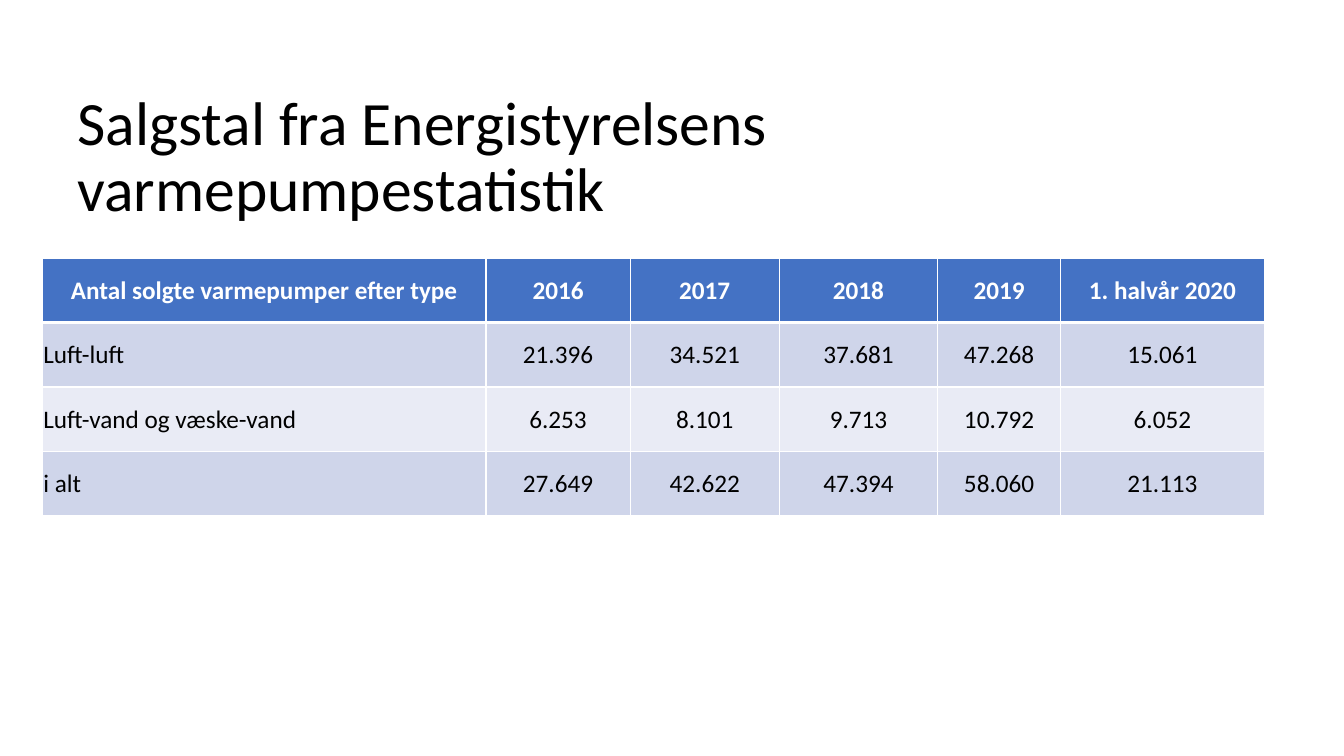
from dataclasses import dataclass

from lxml import etree
from pptx import Presentation
from pptx import util as u
from pptx.dml import color as c
from pptx.enum import text
from pptx.oxml import ns

FONT = "Calibri"
WHITE, BLACK = "FFFFFF", "000000"
WIDTHS = [4.4, 1.43, 1.48, 1.57, 1.22, 2.02]
HIGH = 0.64


@dataclass
class Row:
    cells: list[str]
    fill: str
    ink: str = BLACK
    head: bool = False


ROWS = [
    Row(["Antal solgte varmepumper efter type", "2016", "2017", "2018", "2019",
         "1. halvår 2020"], "4472C4", WHITE, True),
    Row(["Luft-luft", "21.396", "34.521", "37.681", "47.268", "15.061"], "CFD5EA"),
    Row(["Luft-vand og væske-vand", "6.253", "8.101", "9.713", "10.792", "6.052"],
        "E9EBF5"),
    Row(["i alt", "27.649", "42.622", "47.394", "58.060", "21.113"], "CFD5EA"),
]


def rgb(code: str) -> c.RGBColor:
    return c.RGBColor.from_string(code)


def add_run(para, words: str, size: float, ink: str, bold: bool = False) -> None:
    run = para.add_run()
    run.text = words
    run.font.name = FONT
    run.font.size = u.Pt(size)
    run.font.bold = bold
    run.font.color.rgb = rgb(ink)


def add_edge(cell, side: str, width: float) -> None:
    props = cell._tc.get_or_add_tcPr()
    line = etree.SubElement(props, ns.qn(f"a:ln{side}"), w=str(u.Pt(width)))
    fill = etree.SubElement(line, ns.qn("a:solidFill"))
    etree.SubElement(fill, ns.qn("a:srgbClr"), val=WHITE)


def draw_cell(cell, words: str, row: Row, first: bool) -> None:
    for side in "LRTB":
        add_edge(cell, side, 3 if row.head and side == "B" else 1)
    cell.fill.solid()
    cell.fill.fore_color.rgb = rgb(row.fill)
    cell.vertical_anchor = text.MSO_ANCHOR.MIDDLE
    cell.margin_left = cell.margin_right = cell.margin_top = u.Inches(0.01)
    cell.margin_bottom = 0
    para = cell.text_frame.paragraphs[0]
    left = first and not row.head
    para.alignment = text.PP_ALIGN.LEFT if left else text.PP_ALIGN.CENTER
    add_run(para, words, 18, row.ink, row.head)


def draw_title(slide) -> None:
    box = slide.shapes.add_textbox(
        u.Inches(0.67), u.Inches(0.76), u.Inches(11.87), u.Inches(1.63))
    frame = box.text_frame
    frame.word_wrap = True
    frame.vertical_anchor = text.MSO_ANCHOR.MIDDLE
    para = frame.paragraphs[0]
    para.line_spacing = 0.9
    add_run(para, "Salgstal fra Energistyrelsens varmepumpestatistik", 44, BLACK)


def draw_table(slide) -> None:
    table = slide.shapes.add_table(
        len(ROWS), len(WIDTHS), u.Inches(0.42), u.Inches(2.56),
        u.Inches(sum(WIDTHS)), u.Inches(HIGH * len(ROWS))).table
    for col, width in zip(table.columns, WIDTHS):
        col.width = u.Inches(width)
    for i, row in enumerate(ROWS):
        table.rows[i].height = u.Inches(HIGH)
        for j, words in enumerate(row.cells):
            draw_cell(table.cell(i, j), words, row, j == 0)


def main() -> None:
    deck = Presentation()
    deck.slide_width, deck.slide_height = u.Inches(13.33), u.Inches(7.5)
    slide = deck.slides.add_slide(deck.slide_layouts[6])
    # Heading
    draw_title(slide)
    # Sales figures
    draw_table(slide)
    deck.save("out.pptx")


if __name__ == "__main__":
    main()
